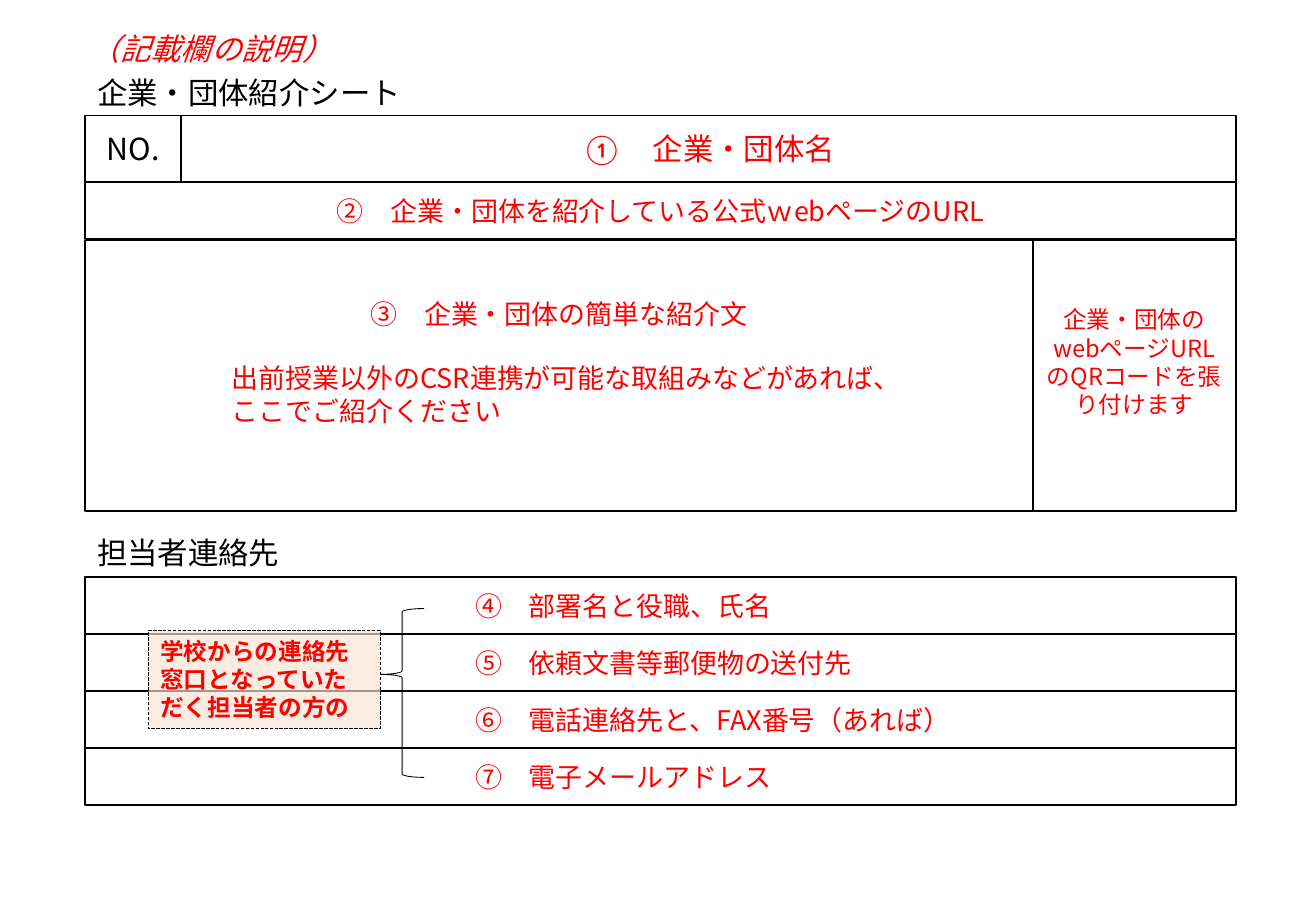
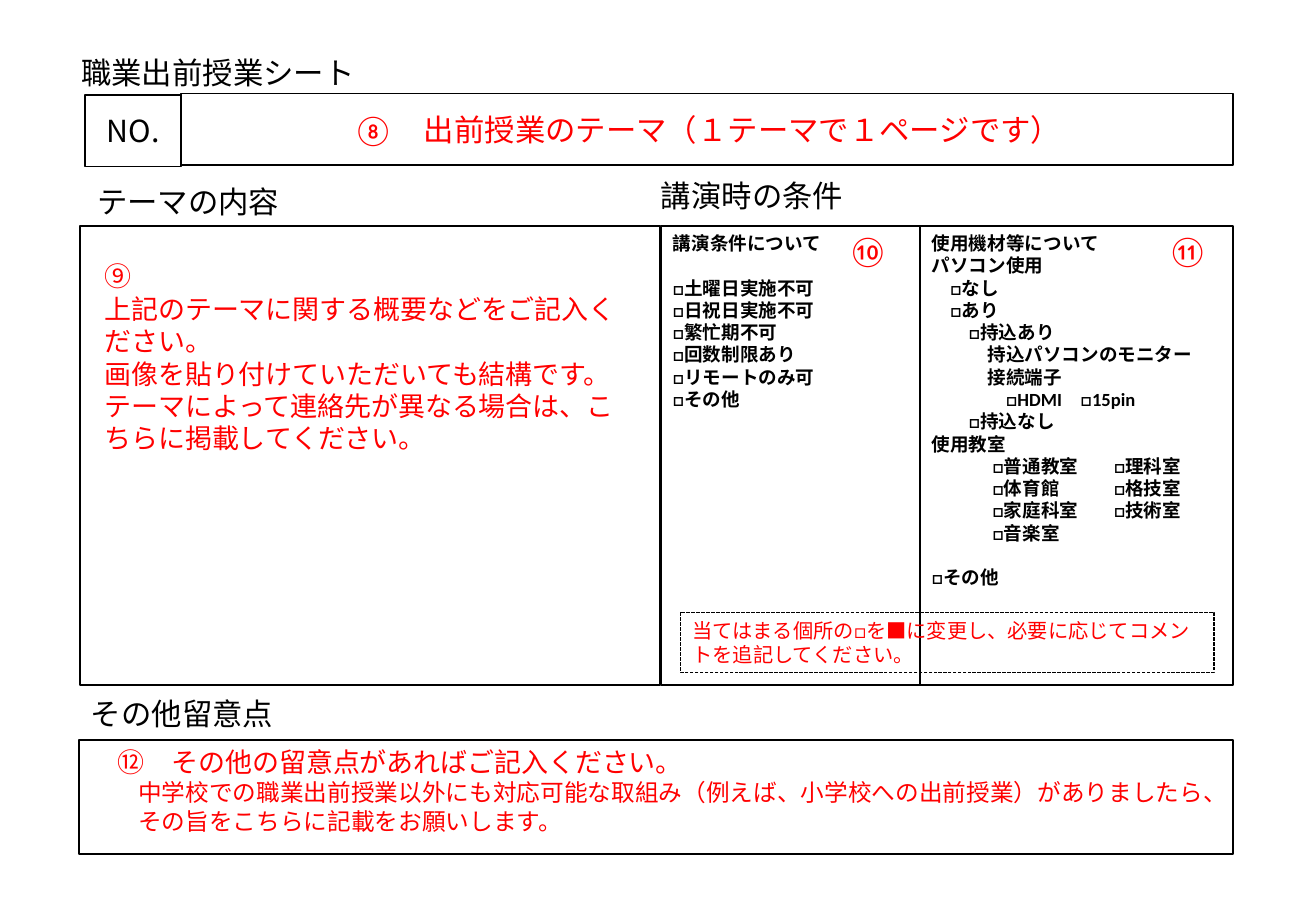
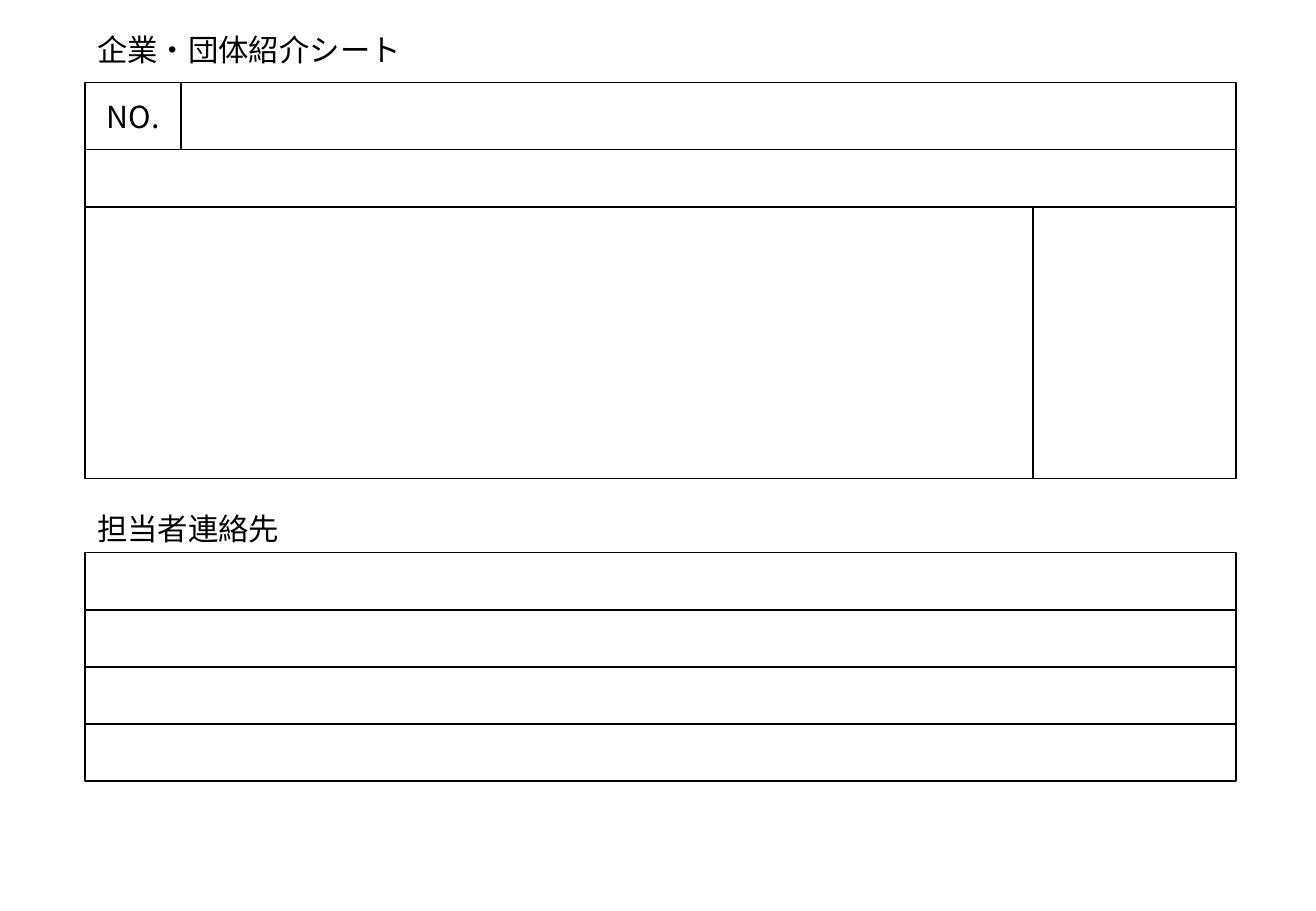
import pptx
import pptx.util
import pptx.dml.color
import pptx.enum.dml
import pptx.enum.shapes
import pptx.enum.text
import pptx.oxml
import pptx.oxml.ns
import lxml.etree

Inches, Pt = pptx.util.Inches, pptx.util.Pt
MSO_SHAPE = pptx.enum.shapes.MSO_SHAPE
ANCHOR = pptx.enum.text.MSO_ANCHOR
ALIGN = pptx.enum.text.PP_ALIGN
qn = pptx.oxml.ns.qn

# Shared look
BLACK, RED, PEACH = "000000", "FF0000", "FBE5D6"
NOTO, CALIBRI = "Noto Sans CJK JP", "Calibri"
LEFT, NO_W, FULL_W, ROW_H = 0.7, 0.79, 9.47, 0.47
HEADING = {"size": 18, "line": None}
CENTER = {"anchor": ANCHOR.MIDDLE, "align": ALIGN.CENTER}
MIDDLE = {"anchor": ANCHOR.MIDDLE}
DASHED = {"line": 0.75, "dash": pptx.enum.dml.MSO_LINE.SQUARE_DOT}


def rgb(hex_colour):
    return pptx.dml.color.RGBColor.from_string(hex_colour)


def box(s, at, paras=(), size=16, color=BLACK, font=NOTO, bold=False, italic=False,
        line=1, dash=None, anchor=ANCHOR.TOP, align=ALIGN.LEFT,
        insets=(0.1, 0.05, 0.1, 0.05), tabs=(), shape=MSO_SHAPE.RECTANGLE):
    """Add a box; a paragraph is a text or (text, overrides), indent is in ems."""
    place = [Inches(v) for v in at]
    if line is None:
        sp = s.shapes.add_textbox(*place)
    else:
        sp = s.shapes.add_shape(shape, *place)
        sp.shadow.inherit = False
        sp.fill.background()
        sp.line.color.rgb = rgb(BLACK)
        sp.line.width = Pt(line)
        if dash:
            sp.line.dash_style = dash
    tf = sp.text_frame
    frame = {"word_wrap": True, "vertical_anchor": anchor}
    for side, inset in zip(("left", "top", "right", "bottom"), insets):
        frame["margin_" + side] = Inches(inset)
    for name, value in frame.items():
        setattr(tf, name, value)
    for i, para in enumerate(paras):
        text, own = (para, {}) if isinstance(para, str) else para
        pt = own.get("size", size)
        p = tf.paragraphs[0] if i == 0 else tf.add_paragraph()
        layout = {"alignment": own.get("align", align), "line_spacing": Pt(pt * 1.2),
                  "space_before": Pt(own.get("before", 0))}
        for name, value in layout.items():
            setattr(p, name, value)
        pPr = p._p.get_or_add_pPr()
        pPr.set("marL", str(Pt(pt * own.get("indent", 0))))
        pPr.set("indent", "0")
        if tabs:
            stops = lxml.etree.SubElement(pPr, qn("a:tabLst"))
            for pos in tabs:
                lxml.etree.SubElement(stops, qn("a:tab"), pos=str(Inches(pos)), algn="l")
        r = p.add_run()
        r.text = text
        r.font.color.rgb = rgb(color)
        look = {"size": Pt(pt), "name": font, "bold": bold, "italic": italic}
        for name, value in look.items():
            setattr(r.font, name, value)
        lxml.etree.SubElement(r._r.get_or_add_rPr(), qn("a:ea"), typeface=font)
    return sp


prs = pptx.Presentation()
prs.slide_width, prs.slide_height = Inches(10.83), Inches(7.5)
guide, lesson, form = [prs.slides.add_slide(prs.slide_layouts[6]) for _ in range(3)]

# Company sheet: explained on the first slide, empty on the last
name = ["①\u3000企業・団体名".replace("\u3000", "　")]
url = ["②　企業・団体を紹介している公式ｗebページのURL"]
qr_note = ["企業・団体のwebページURLのQRコードを張り付けます"]
intro = [("③　企業・団体の簡単な紹介文", {"align": ALIGN.CENTER}),
         ("出前授業以外のCSR連携が可能な取組みなどがあれば、", {"indent": 5, "before": 19.2}),
         ("ここでご紹介ください", {"indent": 5})]
contacts = ["④　部署名と役職、氏名", "⑤　依頼文書等郵便物の送付先",
            "⑥　電話連絡先と、FAX番号（あれば）", "⑦　電子メールアドレス"]
sheets = [(guide, 0.56, 0.95, 4.75, name, url, qr_note, intro, contacts),
          (form, 0.21, 0.68, 4.55, [], [], [], [], [""] * 4)]

for s, title_y, top, contact_y, name, url, qr_note, intro, contacts in sheets:
    url_y, intro_y = top + 0.55, top + 1.03
    box(s, (LEFT, title_y, 6.31, 0.4), ["企業・団体紹介シート"], **HEADING)
    box(s, (LEFT, top, NO_W, 0.55), ["NO."], 18, **CENTER)
    box(s, (LEFT + NO_W, top, FULL_W - NO_W, 0.55), name, 18, RED, CALIBRI, **CENTER)
    box(s, (LEFT, url_y, FULL_W, ROW_H), url, 16, RED, **CENTER)
    box(s, (8.5, intro_y, 1.67, 2.23), qr_note, 14, RED,
        insets=(0.1, 0.05, 0.1, 0.28), **CENTER)
    box(s, (LEFT, intro_y, 7.8, 2.23), intro, 16, RED,
        insets=(0.1, 0.05, 0.1, 0.28), **MIDDLE)
    box(s, (LEFT, contact_y - 0.4, 3.35, 0.4), ["担当者連絡先"], **HEADING)
    for i, contact in enumerate(contacts):
        paras = [(contact, {"indent": 14})] if contact else []
        box(s, (LEFT, contact_y + i * ROW_H, FULL_W, ROW_H), paras, 16, RED, **MIDDLE)

# Notes on the explained sheet
brace = box(guide, (3.13, 5.01, 0.36, 1.39), line=0.5, shape=MSO_SHAPE.LEFT_BRACE)
brace.adjustments[0], brace.adjustments[1] = 0.08, 0.39
callout = box(guide, (1.22, 5.19, 1.91, 0.81), ["学校からの連絡先窓口となっていただく担当者の方の"],
              14, RED, CALIBRI, bold=True, **DASHED)
callout.fill.solid()
callout.fill.fore_color.rgb = rgb(PEACH)
peach = callout.fill._xPr.find(qn("a:solidFill"))[0]
lxml.etree.SubElement(peach, qn("a:alpha"), val="66000")
box(guide, (0.64, 0.2, 2.24, 0.4), ["（記載欄の説明）"], color=RED, italic=True, **HEADING)

# Lesson sheet: headings
s = lesson
for x, y, text in [(0.57, 0.4, "職業出前授業シート"), (5.34, 1.41, "講演時の条件"),
                   (0.7, 1.46, "テーマの内容"), (0.65, 5.67, "その他留意点")]:
    box(s, (x, y, 3.35, 0.4), [text], **HEADING)

# Lesson sheet: theme
box(s, (1.49, 0.77, 8.66, 0.59), ["⑧　出前授業のテーマ（１テーマで１ページです）"],
    18, RED, CALIBRI, **CENTER)
box(s, (LEFT, 0.78, NO_W, 0.59), ["NO."], 18, **CENTER)
box(s, (0.66, 1.86, 4.77, 3.78),
    ["⑨", "上記のテーマに関する概要などをご記入ください。",
     "画像を貼り付けていただいても結構です。",
     "テーマによって連絡先が異なる場合は、こちらに掲載してください。"],
    16, RED, insets=(0.2, 0.28, 0.2, 0.05))

# Lesson sheet: conditions and equipment
box(s, (5.44, 1.86, 2.13, 3.78),
    ["講演条件について", ("□土曜日実施不可", {"before": 13.2}), "□日祝日実施不可",
     "□繁忙期不可", "□回数制限あり", "□リモートのみ可", "□その他"],
    11, font=CALIBRI, bold=True)
box(s, (7.57, 1.86, 2.58, 3.78),
    ["使用機材等について", "パソコン使用", ("□なし", {"indent": 1}), ("□あり", {"indent": 1}),
     ("□持込あり", {"indent": 2}), ("持込パソコンのモニター", {"indent": 3}),
     ("接続端子", {"indent": 3}), ("□HDMI　□15pin", {"indent": 4}),
     ("□持込なし", {"indent": 2}), "使用教室", "\t□普通教室\t□理科室",
     "\t□体育館\t□格技室", "\t□家庭科室\t□技術室", "\t□音楽室",
     ("□その他", {"before": 13.2})],
    11, font=CALIBRI, bold=True, tabs=(0.15, 1.22))
box(s, (5.6, 5.04, 4.39, 0.5),
    ["当てはまる個所の□を■に変更し、必要に応じてコメントを追記してください。"],
    12, RED, CALIBRI, **DASHED)
for x, number in [(6.88, "⑩"), (9.51, "⑪")]:
    box(s, (x, 1.86, 0.64, 0.4), [number], color=RED, font=CALIBRI, **HEADING)

# Lesson sheet: other remarks
box(s, (0.65, 6.09, 9.5, 0.94),
    [("⑫　その他の留意点があればご記入ください。", {"size": 16, "indent": 1}),
     ("中学校での職業出前授業以外にも対応可能な取組み（例えば、小学校への出前授業）がありましたら、",
      {"indent": 2}),
     ("その旨をこちらに記載をお願いします。", {"indent": 2})], 14, RED)

prs.save("out.pptx")
